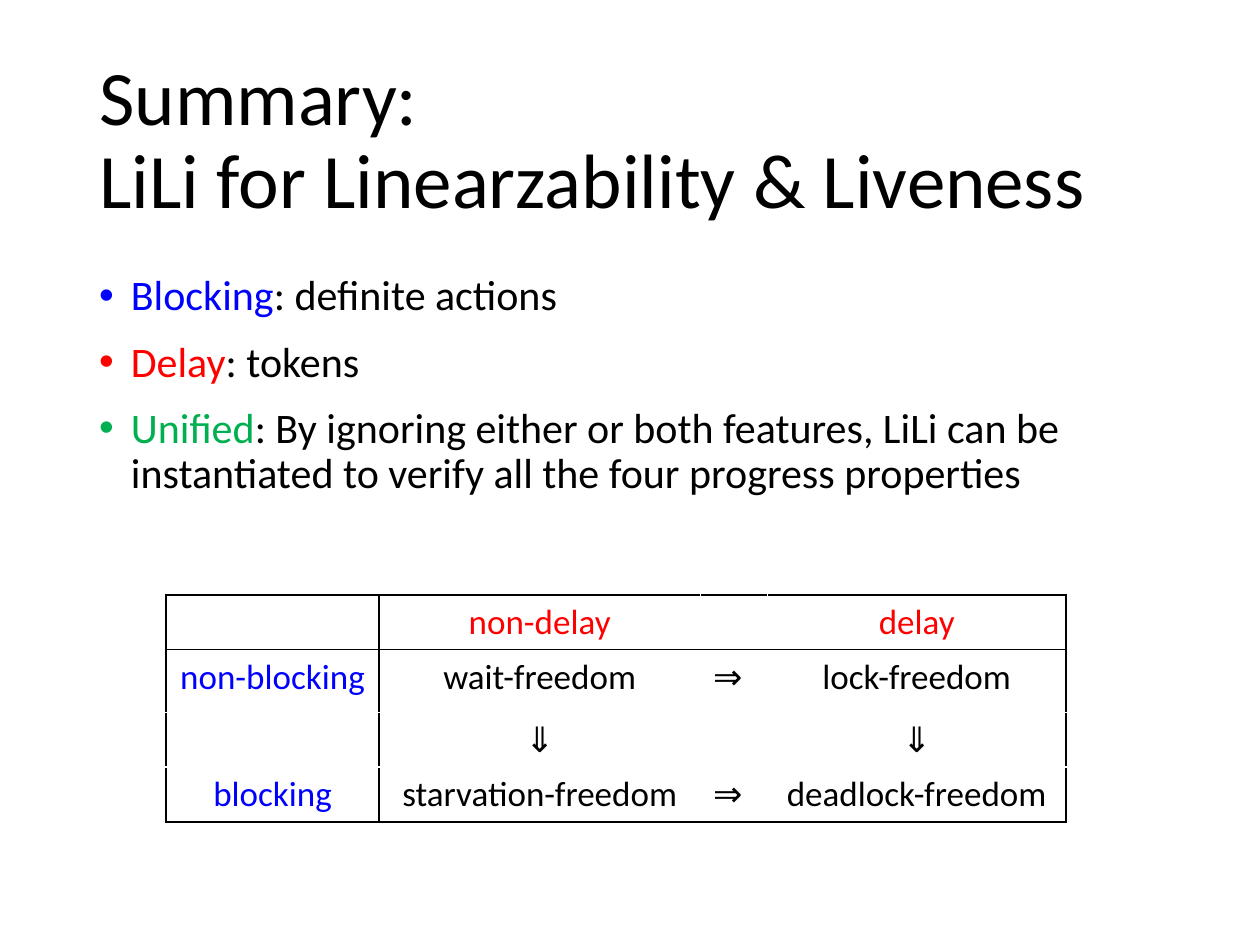
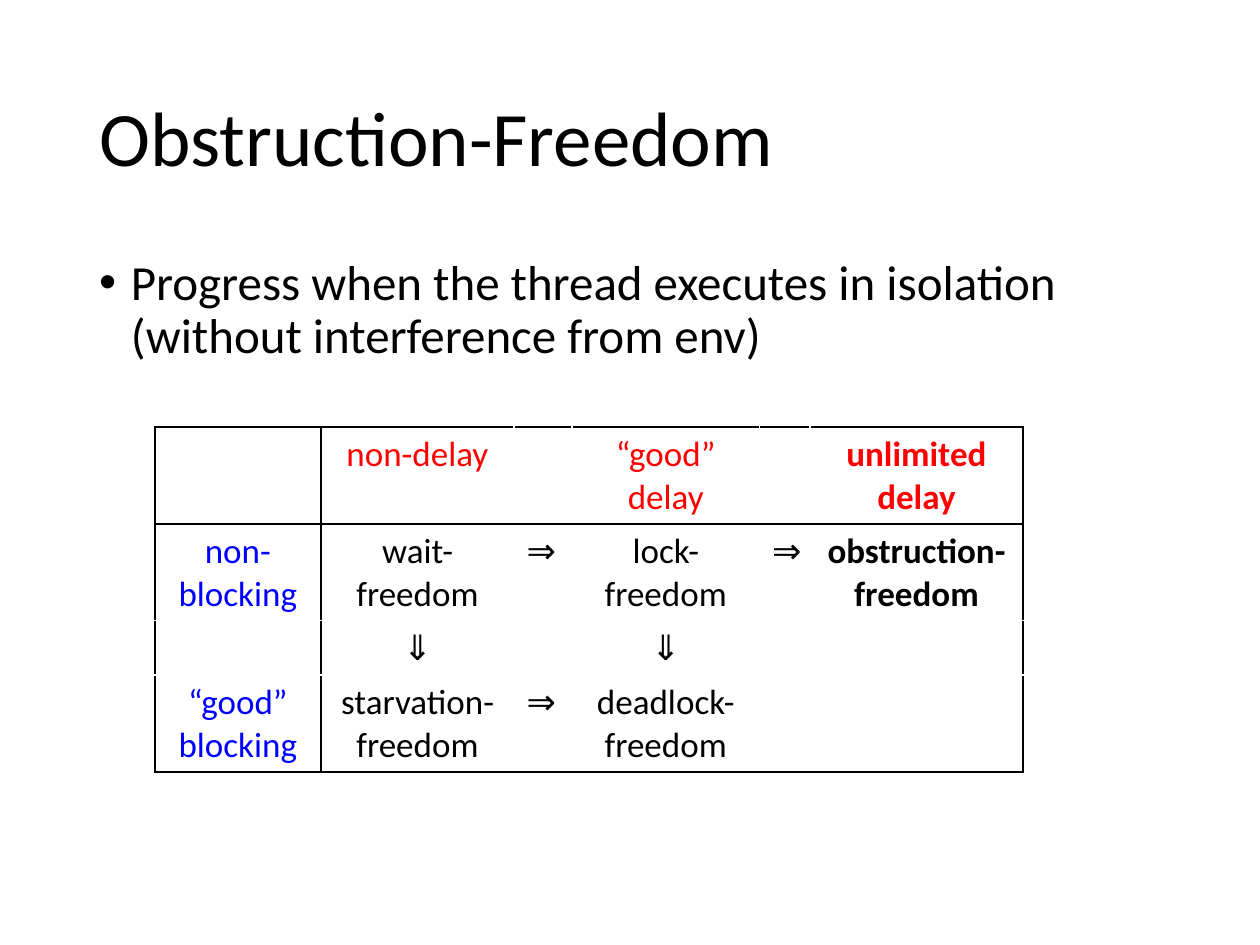
from lxml import etree
from pptx import Presentation
from pptx.dml.color import RGBColor
from pptx.enum import text
from pptx.oxml import ns
from pptx.util import Cm, Pt

FONT = "Calibri"
BLACK, WHITE = "000000", "FFFFFF"
BLUE, RED, GREEN = "0000FF", "FF0000", "00B050"
TITLE_BOX = (1.75, 1.02, 21.89, 3.68)
ROW_HEIGHTS = (1.04, 1.27, 1.02, 1.04)


def paint(font, colour):
    font.color.rgb = RGBColor.from_string(colour)


def style(paragraph, size, colour=None, bold=False):
    font = paragraph.font
    font.name, font.size, font.bold = FONT, Pt(size), bold
    if colour:
        paint(font, colour)


def add_titled_slide(deck, title):
    slide = deck.slides.add_slide(deck.slide_layouts[5])
    heading = slide.shapes.title
    heading.left, heading.top, heading.width, heading.height = map(Cm, TITLE_BOX)
    frame = heading.text_frame
    frame.text = title
    frame.auto_size = text.MSO_AUTO_SIZE.NONE
    frame.vertical_anchor = text.MSO_ANCHOR.MIDDLE
    paragraph = frame.paragraphs[0]
    paragraph.alignment = text.PP_ALIGN.LEFT
    paragraph.line_spacing = 0.9
    style(paragraph, 44, BLACK)
    return slide


def add_bullets(slide, box, bullets, size, space_before):
    """Add a bulleted body; each bullet is a list of (words, colour) pairs."""
    frame = slide.shapes.add_textbox(*map(Cm, box)).text_frame
    frame.word_wrap = True
    for index, pieces in enumerate(bullets):
        paragraph = frame.add_paragraph() if index else frame.paragraphs[0]
        properties = paragraph._p.get_or_add_pPr()
        properties.set("marL", str(Cm(0.64)))
        properties.set("indent", str(-Cm(0.64)))
        etree.SubElement(properties, ns.qn("a:buFont"), typeface="Arial")
        etree.SubElement(properties, ns.qn("a:buChar"), char="•")
        paragraph.line_spacing = 0.9
        paragraph.space_before = Pt(space_before)
        style(paragraph, size)
        for words, colour in pieces:
            run = paragraph.add_run()
            run.text = words
            paint(run.font, colour)


def set_borders(cell, dark_sides):
    properties = cell._tc.get_or_add_tcPr()
    for side in "LRTB":
        line = etree.SubElement(properties, ns.qn(f"a:ln{side}"), w=str(Pt(1)))
        fill = etree.SubElement(line, ns.qn("a:solidFill"))
        etree.SubElement(fill, ns.qn("a:srgbClr"),
                         val=BLACK if side in dark_sides else WHITE)


def add_progress_table(slide, left, top, widths, rows, bold_words=()):
    """Add a matrix ruled in black around its outside and its headings only."""
    last_row, last_column = len(rows) - 1, len(widths) - 1
    table = slide.shapes.add_table(
        len(rows), len(widths), Cm(left), Cm(top),
        Cm(sum(widths)), Cm(sum(ROW_HEIGHTS))).table
    table.first_row = table.horz_banding = False
    for column, width in zip(table.columns, widths):
        column.width = Cm(width)
    for row, height in zip(table.rows, ROW_HEIGHTS):
        row.height = Cm(height)

    for r, row in enumerate(rows):
        for c, words in enumerate(row):
            cell = table.cell(r, c)
            dark = {"L": c <= 1, "R": c in (0, last_column),
                    "T": r <= 1, "B": r in (0, last_row)}
            set_borders(cell, [side for side in dark if dark[side]])
            cell.fill.background()
            cell.text = words
            paragraph = cell.text_frame.paragraphs[0]
            if c != 2:
                paragraph.alignment = text.PP_ALIGN.CENTER
            colour = RED if r == 0 else BLUE if c == 0 else BLACK
            style(paragraph, 20, colour, words in bold_words)


def build_summary(deck):
    slide = add_titled_slide(deck, "Summary: \vLiLi for Linearzability & Liveness")
    add_bullets(slide, (1.75, 5.41, 21.89, 11.76), [
        [("Blocking", BLUE), (": definite actions", BLACK)],
        [("Delay", RED), (": tokens", BLACK)],
        [("Unified", GREEN),
         (": By ignoring either or both features, LiLi can be instantiated "
          "to verify all the four progress properties", BLACK)],
    ], size=24, space_before=12)
    add_progress_table(slide, 3.35, 11.99, (4.29, 6.48, 1.35, 6.02), [
        ("", "non-delay", "", "delay"),
        ("non-blocking", "wait-freedom", "⇒", "lock-freedom"),
        ("", "⇓", "", "⇓"),
        ("blocking", "starvation-freedom", "⇒", "deadlock-freedom"),
    ])


def build_obstruction_freedom(deck):
    slide = add_titled_slide(deck, "Obstruction-Freedom")
    add_bullets(slide, (1.75, 5.08, 21.89, 12.09), [
        [("Progress when the thread executes in isolation "
          "(without interference from env)", BLACK)],
    ], size=28, space_before=10)
    add_progress_table(slide, 3.12, 8.61, (3.35, 3.89, 1.17, 3.78, 1.02, 4.29), [
        ("", "non-delay", "", "“good” delay", "", "unlimited delay"),
        ("non-blocking", "wait-freedom", "⇒", "lock-freedom", "⇒",
         "obstruction-freedom"),
        ("", "⇓", "", "⇓", "", ""),
        ("“good” blocking", "starvation-freedom", "⇒", "deadlock-freedom", "", ""),
    ], bold_words=("unlimited delay", "obstruction-freedom"))


def main():
    deck = Presentation()
    deck.slide_width, deck.slide_height = Cm(25.4), Cm(19.05)
    build_summary(deck)
    build_obstruction_freedom(deck)
    deck.save("out.pptx")


if __name__ == "__main__":
    main()
